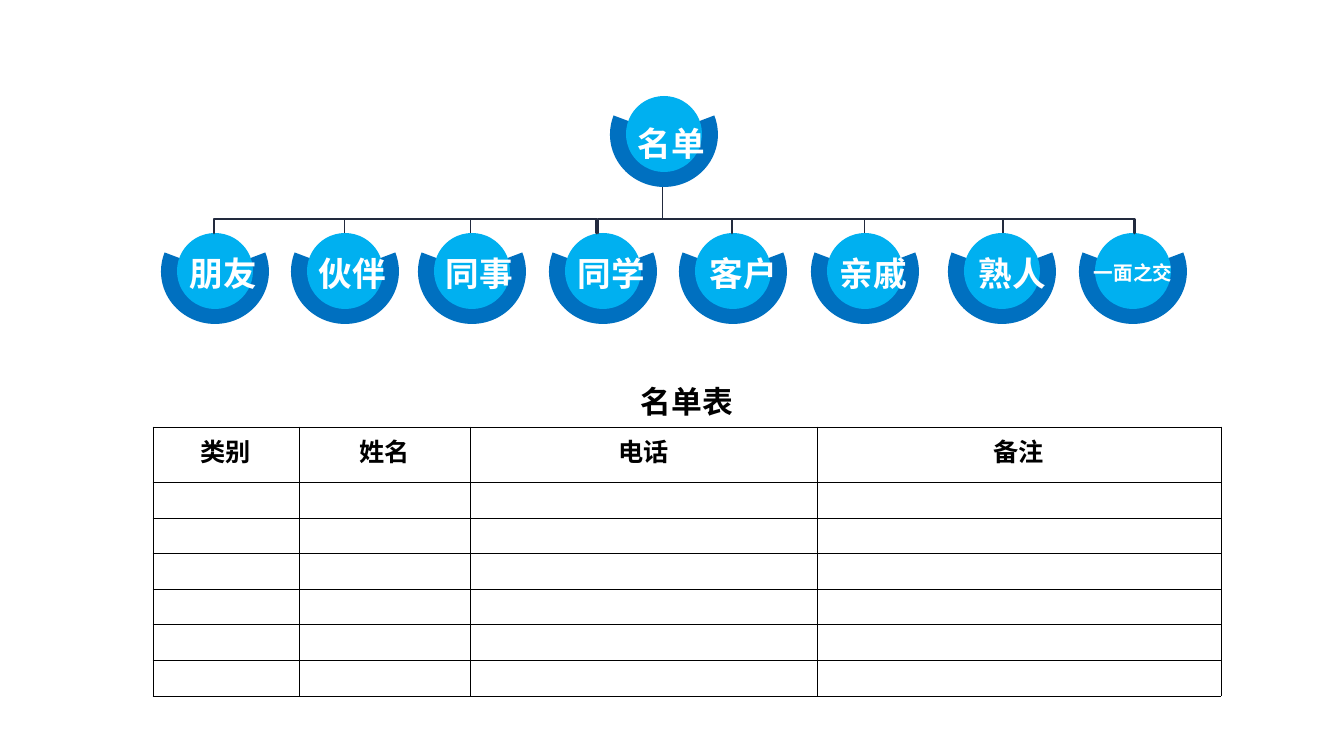
from lxml.etree import SubElement
from pptx import Presentation
from pptx.dml.color import RGBColor
from pptx.enum.shapes import MSO_CONNECTOR as Connector, MSO_SHAPE as Shape
from pptx.enum.text import MSO_ANCHOR as Anchor, MSO_AUTO_SIZE as AutoSize, PP_ALIGN as Align
from pptx.oxml import parse_xml
from pptx.oxml.ns import nsdecls, qn
from pptx.util import Pt

ROOT = dict(label="名单", left=610, top=82, text_left=628, text_top=118)
GROUPS = [
    ("朋友", 161, 180), ("伙伴", 291, 309), ("同事", 418, 436), ("同学", 549, 568),
    ("客户", 679, 700), ("亲戚", 811, 830), ("熟人", 948, 969),
]
LAST_GROUP = dict(label="一面之交", left=1079, top=219, text_left=1084, text_top=256,
                  text_width=99, text_height=34, size=14)
BRACKETS = [(214, 266, False), (425, 172, True), (732, 266, False),
            (928, 207, True), (598, 266, False)]
THIN_DROPS = [345, 471, 865, 1003]
TITLE = "名单表"
HEADINGS = ["类别", "姓名", "电话", "备注"]
COLUMNS = [146, 171, 347, 404]
ROWS = [44, 55, 36, 35, 36, 35, 36, 36]

RING = RGBColor(0x00, 0x70, 0xC0)
DISC = RGBColor(0x00, 0xB0, 0xF0)
BRANCH = RGBColor(0x22, 0x2A, 0x3E)
BRACKET_FILL = RGBColor(0x0C, 0xB5, 0xC8)
WHITE = RGBColor(0xFF, 0xFF, 0xFF)
BLACK = RGBColor(0x00, 0x00, 0x00)
LABEL_FONT = "Noto Sans CJK SC"
TABLE_FONT = "Arial"
BRANCH_TOP, BRANCH_DROP = 219, 14


def px(length):
    return round(length * 914400 / 100.8)


def write(frame, text, *, size, font, color, align=Align.LEFT):
    paragraph = frame.paragraphs[0]
    paragraph.alignment = align
    run = paragraph.add_run()
    run.text = text
    run.font.size, run.font.bold, run.font.name = Pt(size), True, font
    run.font.color.rgb = color
    SubElement(run.font._element, qn("a:ea")).set("typeface", font)


def add_preset(kind, left, top, width, height, fill, adjustments=()):
    shape = slide.shapes.add_shape(kind, px(left), px(top), px(width), px(height))
    shape.shadow.inherit = False
    shape.fill.solid()
    shape.fill.fore_color.rgb = fill
    shape.line.fill.background()
    for index, value in enumerate(adjustments):
        shape.adjustments[index] = value
    return shape


def add_node(left, top):
    add_preset(Shape.BLOCK_ARC, left, top, 108, 105, RING, (203.594, 120.406, 0.185))
    add_preset(Shape.OVAL, left + 16, top + 14, 76, 76, DISC)


def add_label(label, text_left, text_top, text_width=88, text_height=50, size=24):
    box = slide.shapes.add_textbox(px(text_left), px(text_top), px(text_width), px(text_height))
    box.text_frame.word_wrap = False
    box.text_frame.auto_size = AutoSize.SHAPE_TO_FIT_TEXT
    write(box.text_frame, label, size=size, font=LABEL_FONT, color=WHITE)


def add_drop(x, top, bottom):
    drop = slide.shapes.add_connector(Connector.STRAIGHT, px(x), px(top), px(x), px(bottom))
    drop.line.color.rgb, drop.line.width = BRANCH, Pt(0.75)
    SubElement(drop._element.spPr, qn("a:effectLst"))


def add_bracket(left, width, flipped):
    bracket = add_preset(Shape.HALF_FRAME, left, BRANCH_TOP, width, BRANCH_DROP,
                         BRACKET_FILL, (0, 0))
    bracket.line.color.rgb, bracket.line.width = BRANCH, Pt(2)
    if flipped:
        bracket._element.spPr.find(qn("a:xfrm")).set("flipH", "1")


def set_borders(cell, visible):
    properties = cell._tc.get_or_add_tcPr()
    for index, side in enumerate("LRTB"):
        paint = f'<a:solidFill><a:srgbClr val="{BLACK}"/></a:solidFill>' if side in visible else "<a:noFill/>"
        properties.insert(index, parse_xml(
            f'<a:ln{side} {nsdecls("a")} w="{Pt(0.5)}">{paint}</a:ln{side}>'))


def add_contacts():
    table = slide.shapes.add_table(len(ROWS), len(COLUMNS), px(153), px(383),
                                   px(sum(COLUMNS)), px(sum(ROWS))).table
    table.first_row = table.horz_banding = False
    for column, width in zip(table.columns, COLUMNS):
        column.width = px(width)
    for row, height in zip(table.rows, ROWS):
        row.height = px(height)
    table.cell(0, 0).merge(table.cell(0, len(COLUMNS) - 1))
    texts = {(0, 0): (TITLE, 22)}
    texts.update({(1, column): (heading, 18) for column, heading in enumerate(HEADINGS)})
    for row in range(len(ROWS)):
        for column in range(len(COLUMNS)):
            cell = table.cell(row, column)
            cell.fill.background()
            set_borders(cell, "LRTB" if row else "B")
            cell.margin_left = cell.margin_right = cell.margin_top = px(1)
            cell.margin_bottom = px(5)
            cell.vertical_anchor = Anchor.MIDDLE
            if (row, column) in texts:
                text, size = texts[row, column]
                write(cell.text_frame, text, size=size, font=TABLE_FONT,
                      color=BLACK, align=Align.CENTER)
            else:
                SubElement(cell.text_frame.paragraphs[0]._p, qn("a:endParaRPr")).set("sz", "1000")


deck = Presentation()
deck.slide_width, deck.slide_height = px(1344), px(756)
slide = deck.slides.add_slide(deck.slide_layouts[6])

add_contacts()
add_drop(663, 181, BRANCH_TOP)
nodes = [ROOT]
nodes += [dict(label=label, left=left, top=219, text_left=text_left, text_top=248)
          for label, left, text_left in GROUPS]
nodes.append(LAST_GROUP)
for node in nodes:
    add_node(node.pop("left"), node.pop("top"))
for bracket in BRACKETS:
    add_bracket(*bracket)
for x in THIN_DROPS:
    add_drop(x, BRANCH_TOP, BRANCH_TOP + BRANCH_DROP)
for node in nodes:
    add_label(**node)

deck.save("out.pptx")
